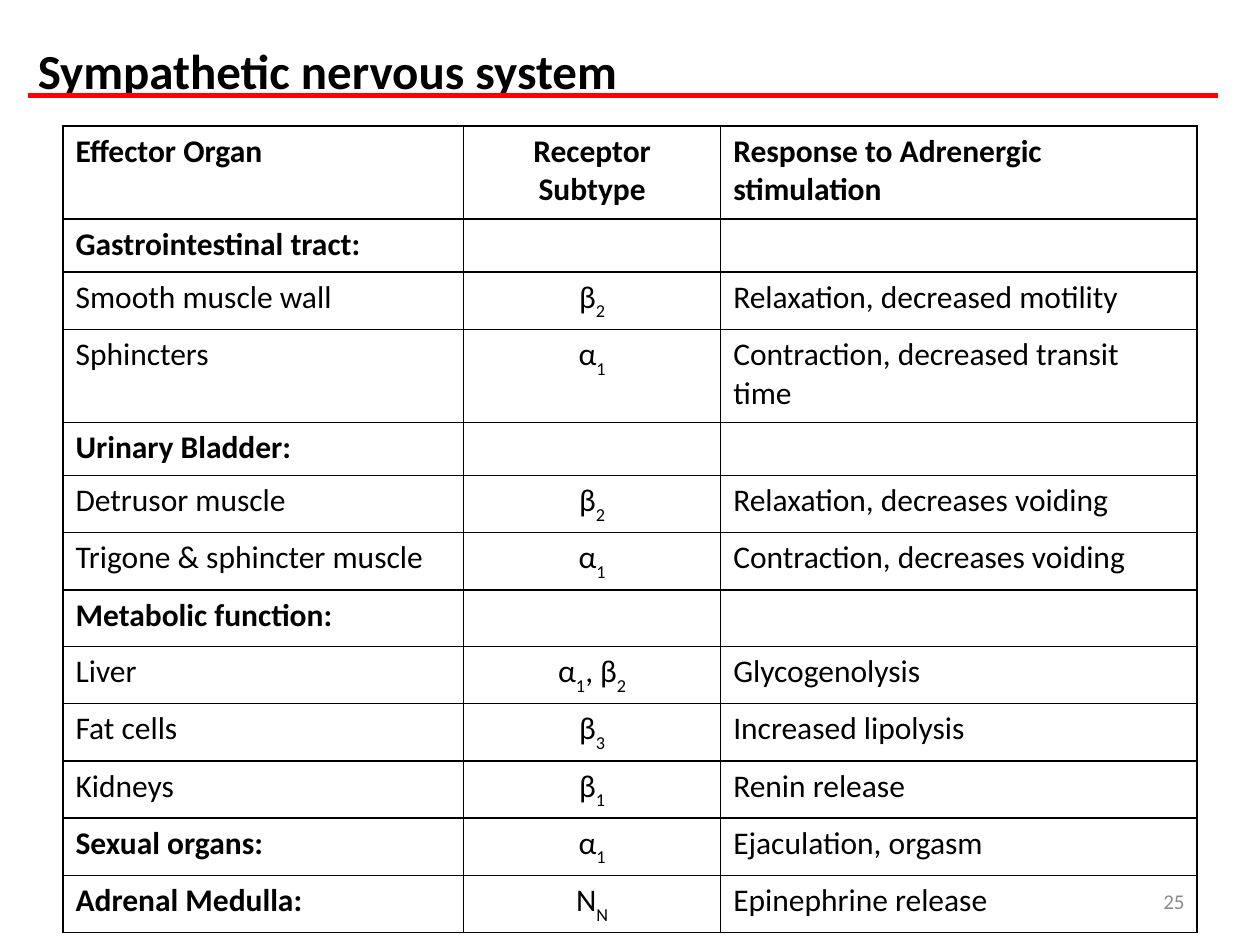
from lxml import etree
from pptx import Presentation
from pptx.dml.color import RGBColor
from pptx.enum.shapes import MSO_CONNECTOR
from pptx.enum.text import MSO_ANCHOR, PP_ALIGN
from pptx.oxml.ns import qn
from pptx.util import Inches, Pt

LEFT, CENTER, RIGHT = PP_ALIGN.LEFT, PP_ALIGN.CENTER, PP_ALIGN.RIGHT
TOP, MIDDLE = MSO_ANCHOR.TOP, MSO_ANCHOR.MIDDLE
STRAIGHT = MSO_CONNECTOR.STRAIGHT

BLACK = RGBColor(0x00, 0x00, 0x00)
RED = RGBColor(0xFF, 0x00, 0x00)
GRAY = RGBColor(0x8C, 0x8C, 0x8C)
FONT = "Calibri"
TITLE_ONLY = 5

COLUMN_WIDTHS = (3.18, 2.04, 3.78)
ROW_HEIGHT = 0.42
SUBSCRIPT_ROW_HEIGHT = 0.45
WRAPPED_ROW_HEIGHT = 0.74
WRAPPED_ROWS = (0, 3)
SUBSCRIPT_HEIGHT_ROWS = (2, 7)

EFFECTS = [
    ("Effector Organ", "Receptor Subtype", "Response to Adrenergic stimulation"),
    ("Gastrointestinal tract:", "", ""),
    ("Smooth muscle wall", "β_2", "Relaxation, decreased motility"),
    ("Sphincters", "α_1", "Contraction, decreased transit time"),
    ("Urinary Bladder:", "", ""),
    ("Detrusor muscle", "β_2", "Relaxation, decreases voiding"),
    ("Trigone & sphincter muscle", "α_1", "Contraction, decreases voiding"),
    ("Metabolic function:", "", ""),
    ("Liver", "α_1, β_2", "Glycogenolysis"),
    ("Fat cells", "β_3", "Increased lipolysis"),
    ("Kidneys", "β_1", "Renin release"),
    ("Sexual organs:", "α_1", "Ejaculation, orgasm"),
    ("Adrenal Medulla:", "N_N", "Epinephrine release"),
]


def write_text(frame, text, size=18, bold=False, color=BLACK, align=LEFT, anchor=TOP):
    """Write one paragraph, lowering the character after each underscore."""
    frame.word_wrap = True
    frame.vertical_anchor = anchor
    paragraph = frame.paragraphs[0]
    paragraph.alignment = align
    paragraph.font.size = Pt(size)
    first, *rest = text.split("_")
    pieces = [(first, None)]
    for part in rest:
        pieces += [(part[0], "-30000"), (part[1:], None)]
    for piece, baseline in pieces:
        if not piece:
            continue
        run = paragraph.add_run()
        run.text = piece
        run.font.name = FONT
        run.font.size = Pt(size)
        run.font.bold = bold
        run.font.color.rgb = color
        if baseline:
            run.font._element.set("baseline", baseline)


def border_cell(cell):
    """Draw a thin black line on every side of a cell."""
    properties = cell._tc.get_or_add_tcPr()
    for side in ("lnL", "lnR", "lnT", "lnB"):
        line = etree.SubElement(properties, qn(f"a:{side}"), w=str(Pt(1)))
        fill = etree.SubElement(line, qn("a:solidFill"))
        etree.SubElement(fill, qn("a:srgbClr"), val=str(BLACK))


def place_title(slide, left, top, width, height):
    """Place the slide title and the red rule under it."""
    title = slide.shapes.title
    title.left, title.top = Inches(left), Inches(top)
    title.width, title.height = Inches(width), Inches(height)
    write_text(title.text_frame, "Sympathetic nervous system", size=28, bold=True)
    rule_y = Inches(top + 0.49)
    rule = slide.shapes.add_connector(
        STRAIGHT, Inches(left + 0.02), rule_y, Inches(left + 9.47), rule_y)
    rule.line.color.rgb = RED
    rule.line.width = Pt(3)
    etree.SubElement(rule._element.spPr, qn("a:effectLst"))


def place_page_number(slide, left, top, width, height):
    """Place the page number at the right of its box."""
    number = slide.shapes.add_textbox(
        Inches(left), Inches(top), Inches(width), Inches(height))
    write_text(number.text_frame, "25", size=12, color=GRAY, align=RIGHT, anchor=MIDDLE)


def row_height(index):
    """Return the height in inches of a table row."""
    if index in WRAPPED_ROWS:
        return WRAPPED_ROW_HEIGHT
    return SUBSCRIPT_ROW_HEIGHT if index in SUBSCRIPT_HEIGHT_ROWS else ROW_HEIGHT


def place_effects_table(slide, left, top, width, height):
    """Place the table of organs, receptors and responses."""
    table = slide.shapes.add_table(
        len(EFFECTS), len(COLUMN_WIDTHS),
        Inches(left), Inches(top), Inches(width), Inches(height)).table
    table.first_row = False
    table.horz_banding = False
    for column, column_width in zip(table.columns, COLUMN_WIDTHS):
        column.width = Inches(column_width)
    for row_index, effect in enumerate(EFFECTS):
        table.rows[row_index].height = Inches(row_height(row_index))
        for column_index, text in enumerate(effect):
            cell = table.cell(row_index, column_index)
            border_cell(cell)
            cell.fill.background()
            write_text(cell.text_frame, text,
                       bold=row_index == 0 or text.endswith(":"),
                       align=CENTER if column_index == 1 else LEFT)


def main():
    """Build the slide and save it."""
    presentation = Presentation()
    presentation.slide_width = Inches(10)
    presentation.slide_height = Inches(7.5)
    slide = presentation.slides.add_slide(presentation.slide_layouts[TITLE_ONLY])
    place_page_number(slide, 7.17, 6.95, 2.33, 0.4)
    place_title(slide, 0.2, 0.27, 6.75, 0.57)
    place_effects_table(slide, 0.5, 1, 9, 6.14)
    presentation.save("out.pptx")


if __name__ == "__main__":
    main()
